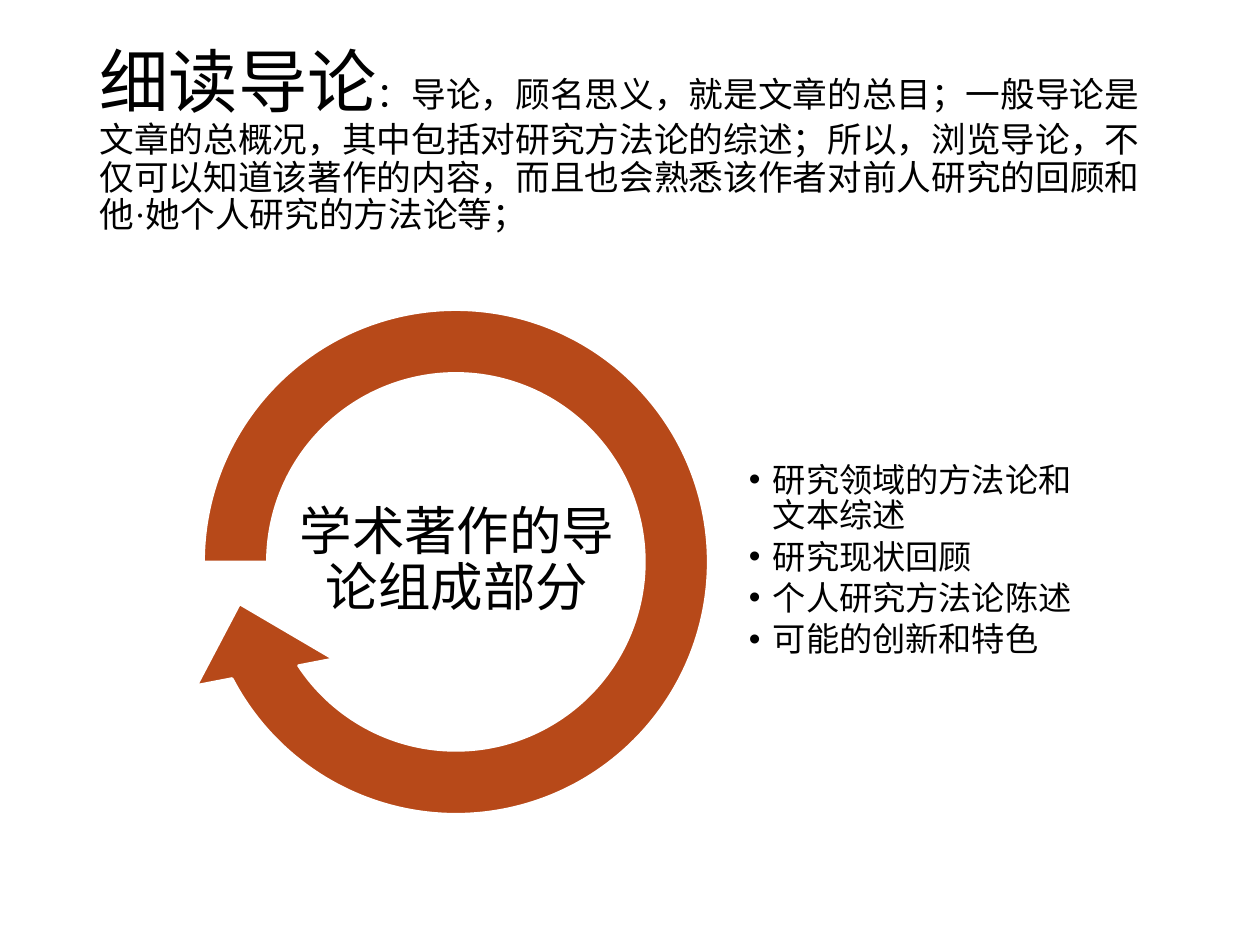
from lxml import etree
from pptx import Presentation
from pptx import util as u
from pptx.dml.color import RGBColor
from pptx.enum import shapes, text
from pptx.oxml.ns import qn

PX = u.Inches(1) / 126
BLACK = RGBColor(0x00, 0x00, 0x00)
WHITE = RGBColor(0xFF, 0xFF, 0xFF)
RUST = RGBColor(0xB7, 0x49, 0x19)
FONT = "Times New Roman"

HEADING = "细读导论"
EXPLANATION = (
    "：导论，顾名思义，就是文章的总目；一般导论是文章的总概况，"
    "其中包括对研究方法论的综述；所以，浏览导论，不仅可以知道该著作的内容，"
    "而且也会熟悉该作者对前人研究的回顾和他·她个人研究的方法论等；"
)
CYCLE_LABEL = "学术著作的导论组成部分"
PARTS = ["研究领域的方法论和文本综述", "研究现状回顾", "个人研究方法论陈述", "可能的创新和特色"]


def emu(px):
    return u.Emu(round(px * PX))


def place(shape, left, top, width, height):
    shape.left, shape.top = emu(left), emu(top)
    shape.width, shape.height = emu(width), emu(height)


def prepare_frame(frame, inset=None):
    """Wrap and centre vertically, with a fixed size and optional equal insets."""
    frame.word_wrap = True
    frame.auto_size = text.MSO_AUTO_SIZE.NONE
    frame.vertical_anchor = text.MSO_ANCHOR.MIDDLE
    if inset is not None:
        frame.margin_left = frame.margin_right = emu(inset)
        frame.margin_top = frame.margin_bottom = emu(inset)


def format_paragraph(paragraph, sizes, align, after=0):
    """Format a paragraph and its runs, one size for each run."""
    paragraph.alignment = align
    paragraph.line_spacing = 0.9
    paragraph.space_before = u.Pt(0)
    paragraph.space_after = u.Pt(after)
    for run, size in zip(paragraph.runs, sizes):
        run.font.size = u.Pt(size)
        run.font.name = FONT
        run.font.color.rgb = BLACK


def add_bullet(paragraph, indent):
    properties = paragraph._p.get_or_add_pPr()
    properties.set("marL", str(emu(indent)))
    properties.set("indent", str(-emu(indent)))
    etree.SubElement(properties, qn("a:buFont")).set("typeface", "Arial")
    etree.SubElement(properties, qn("a:buChar")).set("char", "•")


def fill_title(title, left, top, width, height):
    place(title, left, top, width, height)
    prepare_frame(title.text_frame)
    paragraph = title.text_frame.paragraphs[0]
    for part in (HEADING, EXPLANATION):
        paragraph.add_run().text = part
    format_paragraph(paragraph, [39.6, 19.8], text.PP_ALIGN.LEFT)


def add_cycle(slide, left, top, size):
    """Circular arrow in a square box, with its label in the middle."""
    arrow = slide.shapes.add_shape(
        shapes.MSO_SHAPE.CIRCULAR_ARROW, emu(left), emu(top), emu(size), emu(size)
    )
    for index, value in enumerate([0.11, 11.42, 90, 108, 0.12]):
        arrow.adjustments[index] = value
    arrow.shadow.inherit = False
    arrow.fill.solid()
    arrow.fill.fore_color.rgb = RUST
    arrow.line.color.rgb = WHITE
    arrow.line.width = u.Pt(1.5)

    label = slide.shapes.add_textbox(
        emu(left + 129), emu(top + 209), emu(324), emu(161)
    )
    label.text_frame.text = CYCLE_LABEL
    prepare_frame(label.text_frame, inset=3)
    format_paragraph(label.text_frame.paragraphs[0], [30], text.PP_ALIGN.CENTER)


def fill_parts(body, left, top, width, height):
    place(body, left, top, width, height)
    body.text_frame.text = "\n".join(PARTS)
    prepare_frame(body.text_frame, inset=3)
    for paragraph in body.text_frame.paragraphs:
        paragraph.level = 1
        add_bullet(paragraph, 24)
        format_paragraph(paragraph, [19], text.PP_ALIGN.LEFT, after=3)


def main():
    presentation = Presentation()
    presentation.slide_width, presentation.slide_height = emu(1260), emu(945)
    slide = presentation.slides.add_slide(presentation.slide_layouts[1])
    fill_title(slide.shapes.title, 87, 50, 1086, 183)
    add_cycle(slide, 166, 272, 580)
    fill_parts(slide.placeholders[1], 746, 445, 348, 232)
    presentation.save("out.pptx")


if __name__ == "__main__":
    main()
